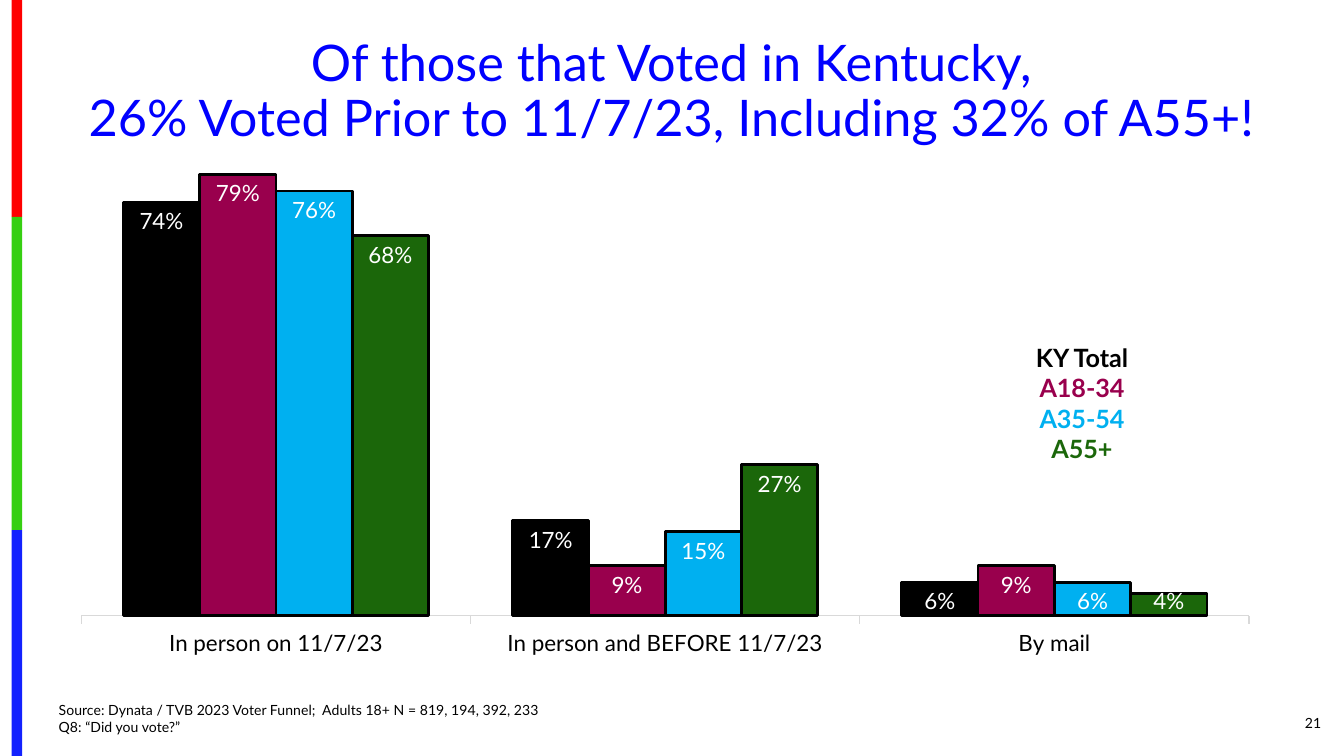
from dataclasses import dataclass

from lxml import etree
from pptx import Presentation
from pptx import util as u
from pptx.chart.data import CategoryChartData
from pptx.dml.color import RGBColor
from pptx.enum import chart as ch, shapes, text
from pptx.oxml import parse_xml
from pptx.oxml.ns import nsdecls, qn


@dataclass(frozen=True)
class Theme:
    font: str = "Lato"
    head: str = "0000FF"
    ink: str = "000000"
    pale: str = "FFFFFF"
    axis: str = "D9D9D9"
    band: tuple = ("FE0000", "36CF12", "1322FE")
    bars: tuple = ("000000", "99004D", "00B0F0", "1B670A")
    big: float = 27
    key: float = 13.5
    mid: float = 12
    base: float = 10
    note: float = 7.5


T = Theme()


def style(font, size, color, bold=False):
    font.name, font.size, font.bold = T.font, u.Pt(size), bold
    font.color.rgb = RGBColor.from_string(color)


def layout(**parts):
    """Build a manual chart layout from tag and value pairs."""
    root = parse_xml(f"<c:layout {nsdecls('c')}><c:manualLayout/></c:layout>")
    for tag, val in parts.items():
        etree.SubElement(root[0], qn(f"c:{tag}")).set("val", str(val))
    return root


deck = Presentation()
deck.slide_width, deck.slide_height = u.Cm(25.4), u.Cm(14.29)
slide = deck.slides.add_slide(deck.slide_layouts[5])

# Colour bands down the left edge
top = 0
for color, tall in zip(T.band, (4.1, 5.92, 4.27)):
    band = slide.shapes.add_shape(shapes.MSO_SHAPE.RECTANGLE, u.Cm(0.22),
                                  u.Cm(top), u.Cm(0.2), u.Cm(tall))
    band.shadow.inherit = False
    band.fill.solid()
    band.fill.fore_color.rgb = RGBColor.from_string(color)
    band.line.fill.background()
    top += tall

# Title
title = slide.shapes.title
title.left, title.top = u.Cm(0.86), u.Cm(0.58)
title.width, title.height = u.Cm(23.65), u.Cm(2.34)
frame = title.text_frame
frame.auto_size = text.MSO_AUTO_SIZE.NONE
frame.word_wrap = True
frame.vertical_anchor = text.MSO_ANCHOR.MIDDLE
para = frame.paragraphs[0]
para.add_run().text = "Of those that Voted in Kentucky,"
para.add_line_break()
para.add_run().text = "26% Voted Prior to 11/7/23, Including 32% of A55+!"
para.alignment, para.line_spacing = text.PP_ALIGN.CENTER, 0.9
style(para.font, T.big, T.head)

# Chart
data = CategoryChartData(number_format="0%")
data.categories = ["In person on 11/7/23", "In person and BEFORE 11/7/23", "By mail"]
rows = [(0.74, 0.17, 0.06), (0.79, 0.09, 0.09),
        (0.76, 0.15, 0.06), (0.68, 0.27, 0.04)]
for num, vals in enumerate(rows, 1):
    data.add_series(f"Series {num}", vals)
chart = slide.shapes.add_chart(
    ch.XL_CHART_TYPE.COLUMN_CLUSTERED, u.Cm(1.22), u.Cm(1.85),
    u.Cm(22.68), u.Cm(10.95), data).chart
chart.has_legend = chart.has_title = False
style(chart.font, T.base, T.ink)

# Axes
cat, val = chart.category_axis, chart.value_axis
cat.major_tick_mark = ch.XL_TICK_MARK.OUTSIDE
cat.format.line.color.rgb = RGBColor.from_string(T.axis)
cat.format.line.width = u.Pt(0.75)
style(cat.tick_labels.font, T.mid, T.ink)
val.minimum_scale, val.maximum_scale = 0, 0.9
val.has_major_gridlines = False
val.visible = False

# Plot area
area = chart._chartSpace.chart.plotArea
for old in area.findall(qn("c:layout")):
    area.remove(old)
area.insert(0, layout(layoutTarget="inner", xMode="edge", yMode="edge",
                      x=0.014, y=0.026, w=0.973, h=0.868))

# Columns and their labels
plot = chart.plots[0]
plot.gap_width, plot.overlap = 110, 0
plot.vary_by_categories = False
for bar, color in zip(plot.series, T.bars):
    bar.format.fill.solid()
    bar.format.fill.fore_color.rgb = RGBColor.from_string(color)
    bar.format.line.color.rgb = RGBColor.from_string(T.ink)
    bar.format.line.width = u.Pt(1.5)
    tags = bar.data_labels
    tags.show_value = True
    tags.number_format, tags.number_format_is_linked = "0%", False
    tags.position = ch.XL_LABEL_POSITION.INSIDE_END
    style(tags.font, T.mid, T.pale)

# Raise the label of the shortest column
last = plot.series[3]
tag = last.points[2].data_label
style(tag.font, T.mid, T.pale)
tag.position = ch.XL_LABEL_POSITION.INSIDE_END
mark = last._element.find(".//" + qn("c:dLbl"))
mark.find(qn("c:idx")).addnext(layout(x=0, y=-0.02))

# Colour key, source note and page number
left, mid, right = text.PP_ALIGN.LEFT, text.PP_ALIGN.CENTER, text.PP_ALIGN.RIGHT
key = list(zip(("KY Total", "A18-34", "A35-54", "A55+"), T.bars))
note = [("Source: Dynata / TVB 2023 Voter Funnel;  Adults 18+ N = 819, 194, 392, 233", T.ink),
        ("Q8: “Did you vote?”", T.ink)]
boxes = [
    ((19.18, 6.35, 2.54, 2.57), key, T.key, True, mid, text.MSO_ANCHOR.TOP),
    ((0.86, 13.13, 20.24, 0.89), note, T.note, False, left, text.MSO_ANCHOR.BOTTOM),
    ((23.16, 13.28, 2.06, 0.76), [("21", T.ink)], T.note, False, right,
     text.MSO_ANCHOR.MIDDLE),
]
for place, lines, size, bold, align, anchor in boxes:
    frame = slide.shapes.add_textbox(*map(u.Cm, place)).text_frame
    frame.word_wrap = lines is not key
    frame.vertical_anchor = anchor
    for num, (words, color) in enumerate(lines):
        para = frame.add_paragraph() if num else frame.paragraphs[0]
        para.text, para.alignment = words, align
        style(para.font, size, color, bold)

deck.save("out.pptx")
